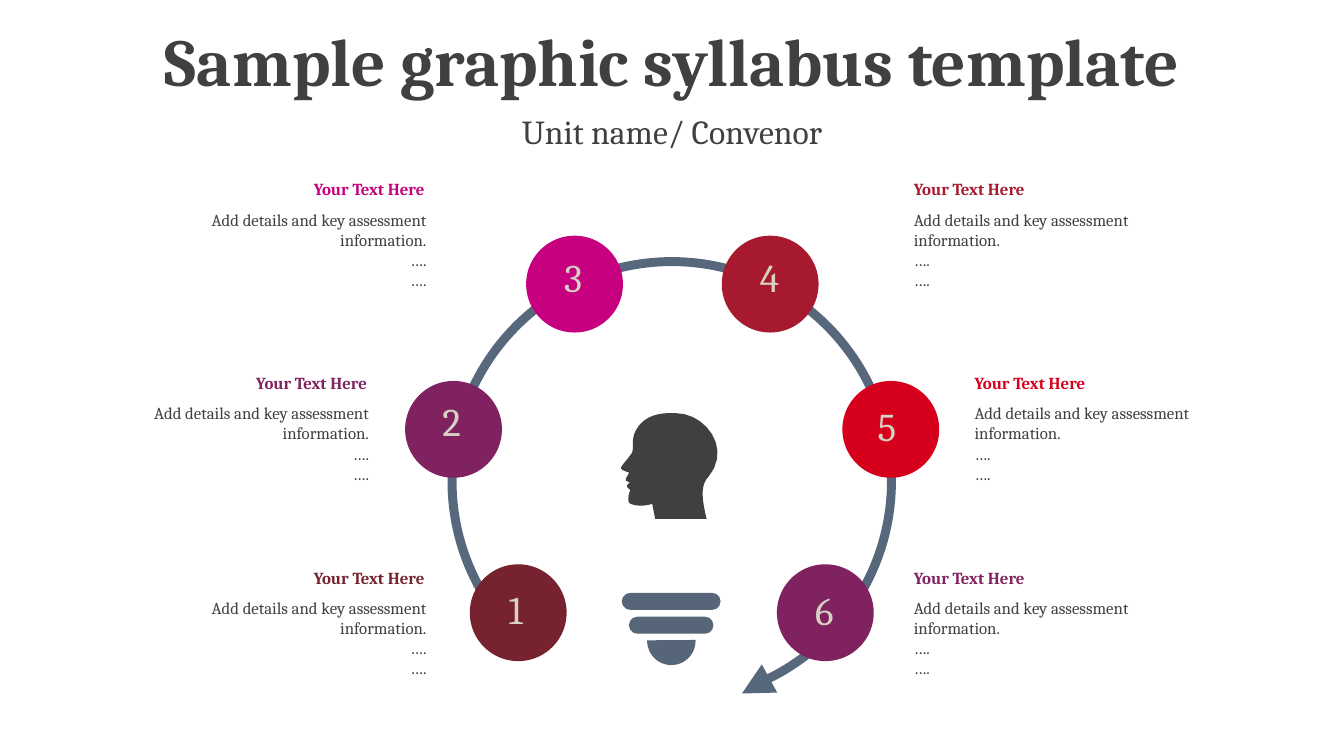
from lxml import etree
from pptx import Presentation
from pptx import util as u
from pptx.dml import color
from pptx.enum import shapes, text
from pptx.oxml import ns

FONT = "Cambria"
DARK, SLATE, NAVY, CREAM = "404040", "57687C", "0F243E", "D6D2C4"
LEFT, CENTER, RIGHT = text.PP_ALIGN.LEFT, text.PP_ALIGN.CENTER, text.PP_ALIGN.RIGHT
HEADING = "Your Text Here"
DETAILS = ["Add details and key assessment information.", "….", "…."]
CIRCLE = 2.44

# number, colour, circle position, digit position, text position, alignment
TOPICS = [
    ("1", "76232F", (11.84, 14.22), (12.57, 14.63), (3.63, 14.17), RIGHT),
    ("2", "80225F", (10.21, 9.6), (10.9, 9.88), (2.18, 9.27), RIGHT),
    ("3", "C6007E", (13.26, 5.94), (13.97, 6.25), (3.63, 4.39), RIGHT),
    ("4", "A6192E", (18.19, 5.94), (18.9, 6.27), (22.78, 4.39), LEFT),
    ("5", "D6001C", (21.23, 9.6), (21.87, 10.01), (24.31, 9.27), LEFT),
    ("6", "80225F", (19.58, 14.22), (20.29, 14.66), (22.78, 14.17), LEFT),
]

HEAD_START = (54, 0)
HEAD_CURVES = [
    [(32, -1), (19, 6), (13, 21)],
    [(10, 33), (14, 37), (9, 42)],
    [(5, 48), (0, 52), (0, 55)],
    [(2, 57), (5, 58), (8, 59)],
    [(7, 62), (4, 65), (5, 67)],
    [(9, 69)],
    [(8, 70), (6, 70), (6, 73)],
    [(7, 75), (10, 76), (9, 77)],
    [(7, 82), (7, 87), (8, 89)],
    [(12, 92), (22, 93), (31, 90)],
    [(34, 105)],
    [(85, 105)],
    [(79, 81), (80, 70), (87, 63)],
    [(110, 35), (84, 0), (54, 0)],
]


def rgb(value):
    return color.RGBColor.from_string(value)


def paint(shape, fill, opacity=100):
    shape.shadow.inherit = False
    shape.fill.solid()
    shape.fill.fore_color.rgb = rgb(fill)
    shape.line.fill.background()
    if opacity < 100:
        solid = shape.fill.fore_color._xFill.find(ns.qn("a:srgbClr"))
        etree.SubElement(solid, ns.qn("a:alpha"), val=str(opacity * 1000))


def add_shape(slide, kind, box, fill, adjustments=(), rotation=0, opacity=100):
    shape = slide.shapes.add_shape(kind, *map(u.Cm, box))
    for index, value in enumerate(adjustments):
        shape.adjustments[index] = value
    shape.rotation = rotation
    paint(shape, fill, opacity)


def add_text(slide, box, lines, size, fill=DARK, bold=False,
             anchor=text.MSO_ANCHOR.TOP, **paragraph_format):
    frame = slide.shapes.add_textbox(*map(u.Cm, box)).text_frame
    frame.word_wrap = True
    frame.vertical_anchor = anchor
    for index, line in enumerate(lines):
        paragraph = frame.add_paragraph() if index else frame.paragraphs[0]
        for name, value in paragraph_format.items():
            setattr(paragraph, name, value)
        run = paragraph.add_run()
        run.text = line
        for name, value in {"name": FONT, "size": u.Pt(size), "bold": bold}.items():
            setattr(run.font, name, value)
        run.font.color.rgb = rgb(fill)


def bezier(start, first, second, end, steps=10):
    for step in range(1, steps + 1):
        t = step / steps
        s = 1 - t
        yield tuple(s**3 * a + 3 * s * s * t * b + 3 * s * t * t * c + t**3 * d
                    for a, b, c, d in zip(start, first, second, end))


def add_head(slide, left, top):
    points = [HEAD_START]
    for curve in HEAD_CURVES:
        points.extend(bezier(points[-1], *curve) if len(curve) == 3 else curve)
    unit = u.Cm(0.0254)
    outline = [(round(x * unit), round(y * unit)) for x, y in points]
    builder = slide.shapes.build_freeform(*outline[0])
    builder.add_line_segments(outline[1:], close=True)
    paint(builder.convert_to_shape(u.Cm(left), u.Cm(top)), DARK)


def add_bulb_base(slide):
    for kind, box, adjustments in [
        (shapes.MSO_SHAPE.ROUNDED_RECTANGLE, (15.67, 14.94, 2.49, 0.43), [0.5]),
        (shapes.MSO_SHAPE.ROUNDED_RECTANGLE, (15.85, 15.54, 2.13, 0.43), [0.5]),
        (shapes.MSO_SHAPE.CHORD, (16.31, 15.54, 1.22, 1.22), [214.71, 108.78]),
    ]:
        add_shape(slide, kind, box, NAVY, adjustments, opacity=70)


def add_topic(slide, number, fill, circle, digit, label, alignment):
    add_shape(slide, shapes.MSO_SHAPE.OVAL, (*circle, CIRCLE, CIRCLE), fill)
    add_text(slide, (*digit, 0.99, 1.45), [number], 28, CREAM)
    left, top = label
    add_text(slide, (left, top, 7.32, 0.76), [HEADING], 12, fill, True,
             alignment=alignment)
    add_text(slide, (left, top + 0.76, 7.37, 2.31), DETAILS, 12,
             alignment=alignment)


def main():
    presentation = Presentation()
    presentation.slide_width = u.Cm(33.87)
    presentation.slide_height = u.Cm(19.05)
    slide = presentation.slides.add_slide(presentation.slide_layouts[6])
    heading = {"anchor": text.MSO_ANCHOR.MIDDLE, "alignment": CENTER,
               "line_spacing": 0.9}
    add_text(slide, (0, 0.56, 33.87, 2.16), ["Sample graphic syllabus template"],
             48, bold=True, **heading)
    add_text(slide, (0, 2.79, 33.87, 1.17), ["Unit name/ Convenor"], 24, **heading)
    add_shape(slide, shapes.MSO_SHAPE.BLOCK_ARC, (11.28, 6.48, 11.3, 11.3), SLATE,
              [84.01, 39.12, 0.02])
    add_shape(slide, shapes.MSO_SHAPE.ISOSCELES_TRIANGLE, (18.64, 16.89, 0.81, 0.79),
              SLATE, rotation=241.4)
    add_head(slide, 15.65, 10.41)
    add_bulb_base(slide)
    for topic in TOPICS:
        add_topic(slide, *topic)
    presentation.save("out.pptx")


if __name__ == "__main__":
    main()
